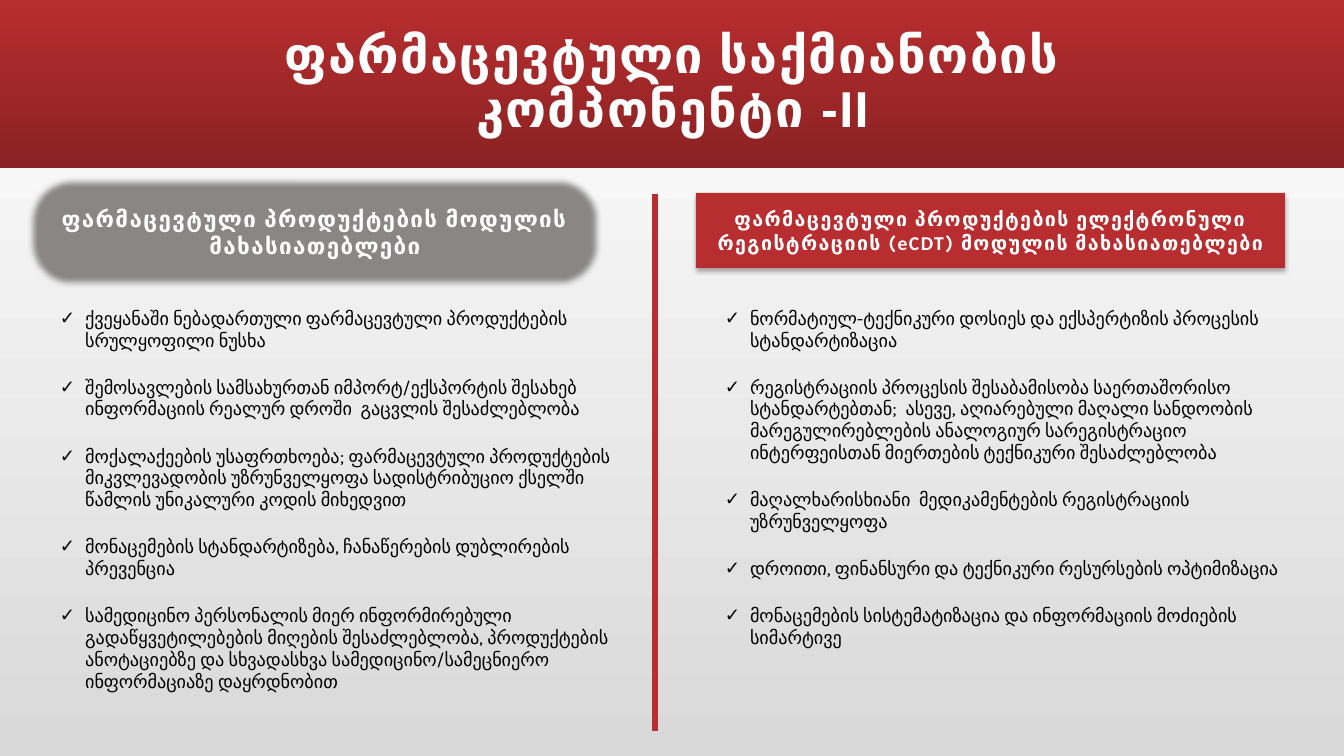
from lxml import etree
from pptx import Presentation
from pptx.dml.color import RGBColor
from pptx.enum.shapes import MSO_CONNECTOR, MSO_SHAPE
from pptx.enum.text import MSO_ANCHOR, MSO_AUTO_SIZE, PP_ALIGN
from pptx.oxml import parse_xml
from pptx.oxml.ns import nsdecls, qn
from pptx.util import Emu, Pt

COLORS = {
    "red": "B82D2F",
    "dark_red": "8A2223",
    "grey": "8A8686",
    "back": "D9D9D9",
    "white": "FFFFFF",
    "black": "000000",
}
EMU_PER_PX = 914400 / 100.8
WIDTH, HEIGHT = 1344, 756

TITLE = "ფარმაცევტული საქმიანობის კომპონენტი -II"
PRODUCTS_HEADING = [("ფარმაცევტული პროდუქტების მოდულის მახასიათებლები", "Karla")]
REGISTRATION_HEADING = [
    ("ფარმაცევტული პროდუქტების ელექტრონული რეგისტრაციის (", "Karla"),
    ("eCDT", "Calibri"),
    (") მოდულის მახასიათებლები", "Karla"),
]
PRODUCTS_POINTS = [
    "ქვეყანაში ნებადართული ფარმაცევტული პროდუქტების სრულყოფილი ნუსხა",
    "შემოსავლების სამსახურთან იმპორტ/ექსპორტის შესახებ ინფორმაციის რეალურ დროში  გაცვლის შესაძლებლობა",
    "მოქალაქეების უსაფრთხოება; ფარმაცევტული პროდუქტების მიკვლევადობის უზრუნველყოფა "
    "სადისტრიბუციო ქსელში წამლის უნიკალური კოდის მიხედვით",
    "მონაცემების სტანდარტიზება, ჩანაწერების დუბლირების პრევენცია",
    "სამედიცინო პერსონალის მიერ ინფორმირებული გადაწყვეტილებების მიღების შესაძლებლობა, "
    "პროდუქტების ანოტაციებზე და სხვადასხვა სამედიცინო/სამეცნიერო ინფორმაციაზე დაყრდნობით",
]
REGISTRATION_POINTS = [
    "ნორმატიულ-ტექნიკური დოსიეს და ექსპერტიზის პროცესის სტანდარტიზაცია",
    "რეგისტრაციის პროცესის შესაბამისობა საერთაშორისო სტანდარტებთან;  ასევე, აღიარებული "
    "მაღალი სანდოობის მარეგულირებლების ანალოგიურ სარეგისტრაციო ინტერფეისთან მიერთების "
    "ტექნიკური შესაძლებლობა",
    "მაღალხარისხიანი  მედიკამენტების რეგისტრაციის უზრუნველყოფა",
    "დროითი, ფინანსური და ტექნიკური რესურსების ოპტიმიზაცია",
    "მონაცემების სისტემატიზაცია და ინფორმაციის მოძიების სიმარტივე",
]


def px(value):
    return Emu(round(value * EMU_PER_PX))


def rgb(name):
    return RGBColor.from_string(COLORS[name])


def effects(inner):
    return parse_xml(f"<a:effectLst {nsdecls('a')}>{inner}</a:effectLst>")


def shadow(blur, distance, alpha):
    return effects(
        f'<a:outerShdw blurRad="{Pt(blur)}" dist="{Pt(distance)}" dir="5400000" rotWithShape="0">'
        f'<a:srgbClr val="{COLORS["black"]}"><a:alpha val="{alpha}000"/></a:srgbClr></a:outerShdw>'
    )


def soft_edge(radius):
    return effects(f'<a:softEdge rad="{Pt(radius)}"/>')


class SlideBuilder:
    def __init__(self, slide):
        self.slide = slide

    def gradient(self, fill, start, end, angle):
        fill.gradient()
        fill.gradient_angle = angle
        for stop, color in zip(fill.gradient_stops, (start, end)):
            stop.color.rgb = rgb(color)

    def style(self, run, font, size, color, bold=False, spacing=0):
        run.font.name = font
        run.font.size = Pt(size)
        run.font.bold = bold
        run.font.color.rgb = rgb(color)
        if spacing:
            run._r.get_or_add_rPr().set("spc", str(spacing * 100))

    def shape(self, kind, x, y, w, h):
        shape = self.slide.shapes.add_shape(kind, px(x), px(y), px(w), px(h))
        shape.line.fill.background()
        shape.shadow.inherit = False
        return shape

    def title(self, text, x, y, w, h):
        title = self.slide.shapes.title
        banner = self.shape(MSO_SHAPE.RECTANGLE, 0, 0, WIDTH, h)
        self.gradient(banner.fill, "red", "dark_red", 270)
        title._element.addprevious(banner._element)
        title.left, title.top, title.width, title.height = map(px, (x, y, w, h))
        frame = title.text_frame
        frame.text = text
        frame.word_wrap = True
        frame.auto_size = MSO_AUTO_SIZE.NONE
        frame.vertical_anchor = MSO_ANCHOR.MIDDLE
        paragraph = frame.paragraphs[0]
        paragraph.alignment = PP_ALIGN.CENTER
        paragraph.line_spacing = 0.9
        self.style(paragraph.runs[0], "Arial", 36, "white", True, 1)

    def heading(self, pieces, kind, x, y, w, h, color, size, effect, text_shadow=False):
        box = self.shape(kind, x, y, w, h)
        box.fill.solid()
        box.fill.fore_color.rgb = rgb(color)
        properties = box._element.spPr
        properties.replace(properties.find(qn("a:effectLst")), effect)
        frame = box.text_frame
        frame.word_wrap = True
        frame.vertical_anchor = MSO_ANCHOR.MIDDLE
        paragraph = frame.paragraphs[0]
        paragraph.alignment = PP_ALIGN.CENTER
        for text, font in pieces:
            run = paragraph.add_run()
            run.text = text
            self.style(run, font, size, "white", True, 1)
            if text_shadow:
                run._r.rPr.find(qn("a:solidFill")).addnext(shadow(4, 3, 50))
        return box

    def checklist(self, points, x, y, w, h):
        frame = self.slide.shapes.add_textbox(px(x), px(y), px(w), px(h)).text_frame
        frame.word_wrap = True
        frame.text = "\n".join(points)
        for paragraph in frame.paragraphs:
            paragraph.space_before = Pt(18)
            properties = paragraph._p.get_or_add_pPr()
            properties.set("marL", "228600")
            properties.set("indent", "-228600")
            etree.SubElement(properties, qn("a:buFont")).set("typeface", "Arial")
            etree.SubElement(properties, qn("a:buChar")).set("char", "✓")
            self.style(paragraph.runs[0], "Karla", 13, "black")

    def divider(self, x, top, bottom):
        line = self.slide.shapes.add_connector(
            MSO_CONNECTOR.STRAIGHT, px(x), px(top), px(x), px(bottom))
        line.line.color.rgb = rgb("red")
        line.line.width = Pt(4)
        line._element.spPr.append(effects(""))


def main():
    deck = Presentation()
    deck.slide_width, deck.slide_height = px(WIDTH), px(HEIGHT)
    builder = SlideBuilder(deck.slides.add_slide(deck.slide_layouts[5]))

    # Background and title banner
    builder.gradient(builder.slide.background.fill, "back", "white", 90)
    builder.title(TITLE, 118, 0, 1109, 168)

    # Column headings and the divider between them
    products = builder.heading(PRODUCTS_HEADING, MSO_SHAPE.ROUNDED_RECTANGLE,
                               28, 177, 574, 111, "grey", 16, soft_edge(5), True)
    products.adjustments[0] = 0.35
    builder.divider(655, 194, 731)
    builder.heading(REGISTRATION_HEADING, MSO_SHAPE.RECTANGLE,
                    696, 193, 589, 75, "red", 14, shadow(3.5, 2.2, 32))

    # Checklists
    builder.checklist(PRODUCTS_POINTS, 50, 302, 572, 403)
    builder.checklist(REGISTRATION_POINTS, 715, 302, 579, 428)

    deck.save("out.pptx")


if __name__ == "__main__":
    main()
